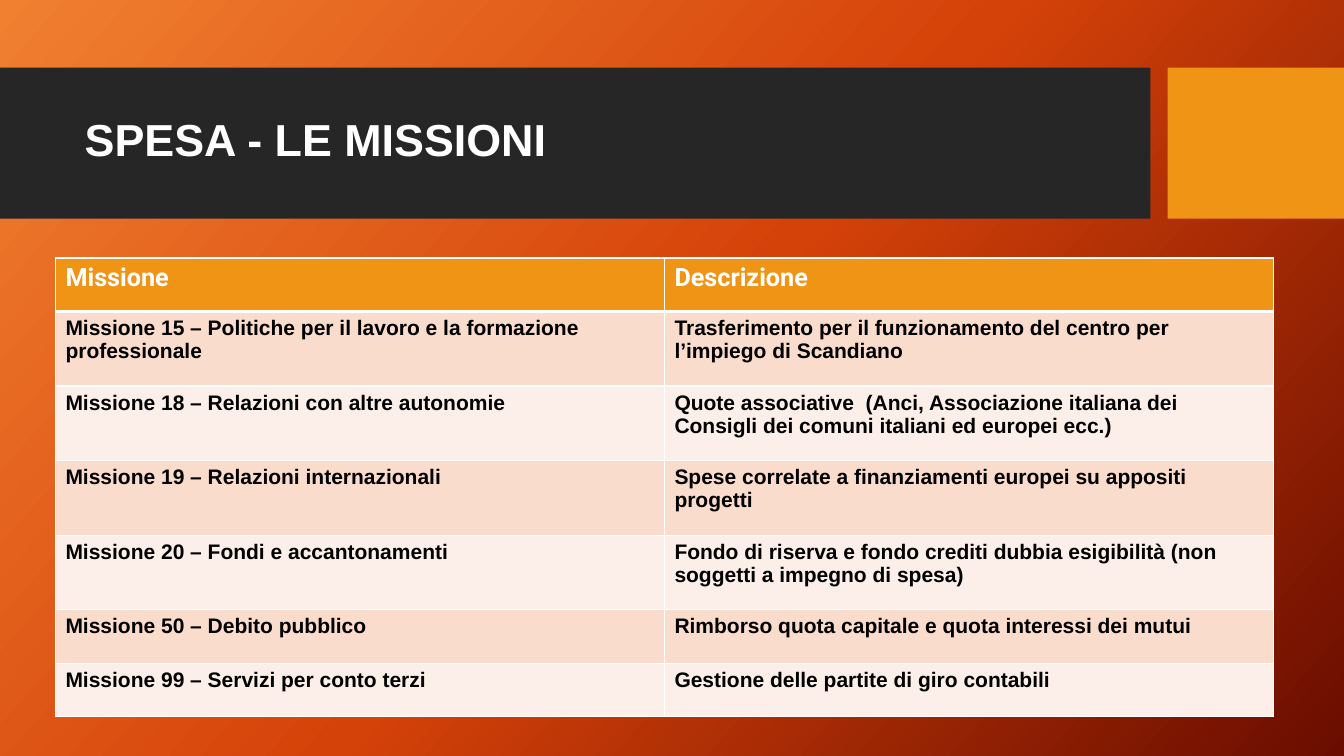
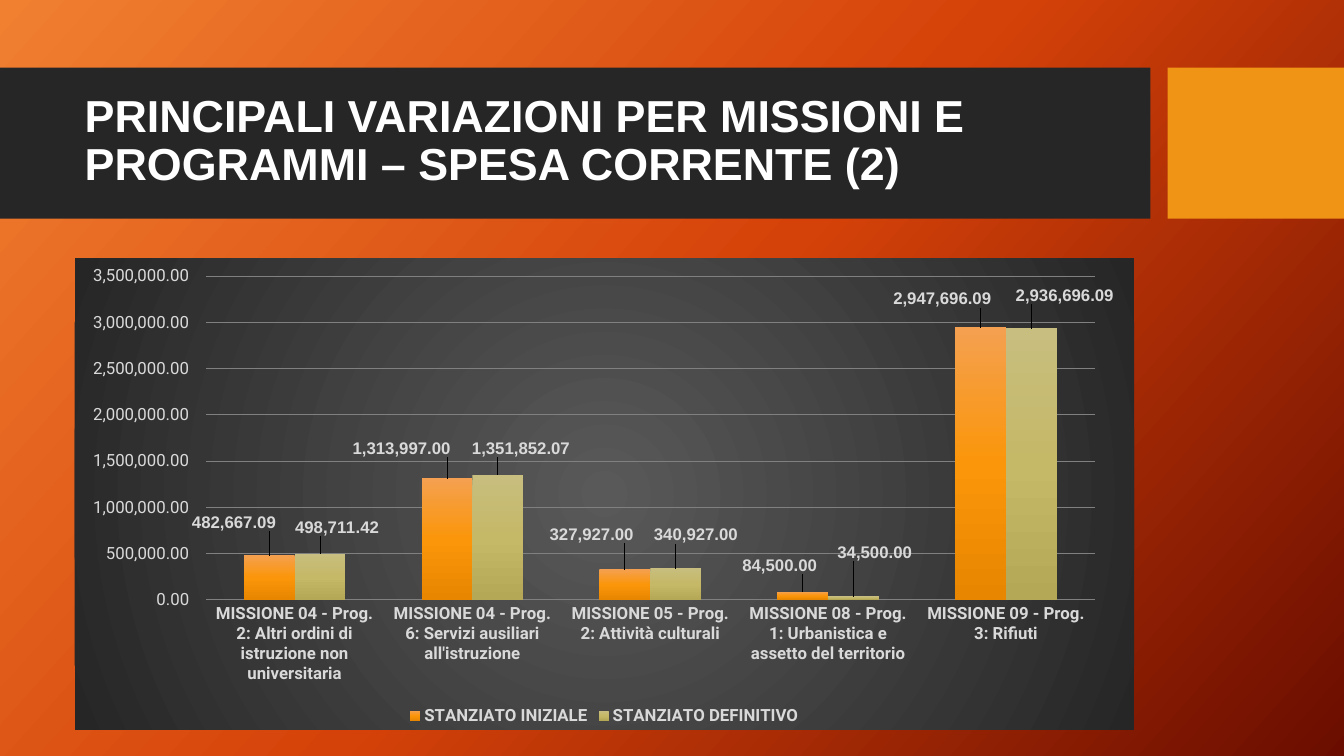
import dataclasses
import itertools

import pptx
import pptx.chart.data
import pptx.dml.color
import pptx.enum.chart
import pptx.enum.shapes
import pptx.enum.text
import pptx.oxml
import pptx.oxml.ns
import pptx.util

Inches = pptx.util.Inches


@dataclasses.dataclass(frozen=True)
class Theme:
    band: str = "262626"
    accent: str = "F09415"
    white: str = "FFFFFF"
    black: str = "000000"
    pale: str = "D9D9D9"
    grid: str = "808080"
    row_fills: tuple = ("F9DCCC", "FCEEE8")
    page_stops: tuple = ((0, "F18031"), (50, "D54209"), (100, "6A0D00"))
    chart_stops: tuple = ((0, "595959"), (100, "262626"))
    series_stops: tuple = (
        ((0, "F4A050"), (50, "FB960A"), (100, "E88600")),
        ((0, "C8BE7F"), (50, "C5B867"), (100, "B4A756")),
    )
    heading_font: str = "Arial"
    body_font: str = "Roboto"
    title_size: int = 32
    header_size: int = 18
    cell_size: int = 15
    chart_size: int = 12


THEME = Theme()
NUMBER_FORMAT = r"#,##0.00\ _€"
CHART_WIDTH, CHART_HEIGHT = 10.51, 4.68

MISSIONS = [
    ("Missione", "Descrizione"),
    ("Missione 15 – Politiche per il lavoro e la formazione professionale",
     "Trasferimento per il funzionamento del centro per l’impiego di Scandiano"),
    ("Missione 18 – Relazioni con altre autonomie",
     "Quote associative  (Anci, Associazione italiana dei Consigli dei comuni italiani ed europei ecc.)"),
    ("Missione 19 – Relazioni internazionali",
     "Spese correlate a finanziamenti europei su appositi progetti"),
    ("Missione 20 – Fondi e accantonamenti",
     "Fondo di riserva e fondo crediti dubbia esigibilità (non soggetti a impegno di spesa)"),
    ("Missione 50 – Debito pubblico",
     "Rimborso quota capitale e quota interessi dei mutui"),
    ("Missione 99 – Servizi per conto terzi",
     "Gestione delle partite di giro contabili"),
]
ROW_HEIGHTS = [0.53, 0.74, 0.74, 0.74, 0.74, 0.53, 0.53]

PROGRAMMES = [
    "MISSIONE 04 - Prog. 2: Altri ordini di istruzione non universitaria",
    "MISSIONE 04 - Prog. 6: Servizi ausiliari all'istruzione",
    "MISSIONE 05 - Prog. 2: Attività culturali",
    "MISSIONE 08 - Prog. 1: Urbanistica e assetto del territorio",
    "MISSIONE 09 - Prog. 3: Rifiuti",
]
BUDGETS = {
    "STANZIATO INIZIALE": [482667.09, 1313997, 327927, 84500, 2947696.09],
    "STANZIATO DEFINITIVO": [498711.42, 1351852.07, 340927, 34500, 2936696.09],
}
LABEL_SHIFTS = [
    [(-0.28, -0.19), (-0.38, -0.17), (-0.26, -0.22), (-0.16, -0.13), (-0.31, -0.15)],
    [(0.24, -0.13), (0.3, -0.13), (0.27, -0.2), (0.28, -0.31), (0.4, -0.2)],
]


def rgb(color):
    return pptx.dml.color.RGBColor.from_string(color)


def make_xml(tag, content, attributes=""):
    names = pptx.oxml.ns.nsdecls("a", "c")
    return pptx.oxml.parse_xml(f"<{tag} {names} {attributes}>{content}</{tag}>")


def make_gradient(stops, angle=None):
    points = "".join(
        f'<a:gs pos="{place * 1000}"><a:srgbClr val="{color}"/></a:gs>'
        for place, color in stops)
    if angle is None:
        course = ('<a:path path="circle"><a:fillToRect l="50000" t="50000" '
                  'r="50000" b="50000"/></a:path>')
    else:
        course = f'<a:lin ang="{angle * 60000}" scaled="0"/>'
    return make_xml("a:gradFill", f"<a:gsLst>{points}</a:gsLst>{course}", 'rotWithShape="1"')


def replace_fill(owner, query, gradient):
    solid = owner.xpath(query)[0]
    solid.getparent().replace(solid, gradient)


def format_font(font, *, size, name, color, bold=False):
    font.size = pptx.util.Pt(size)
    font.name = name
    font.bold = bold
    font.color.rgb = rgb(color)


def write_text(frame, text, *, line_spacing=None, **style):
    para = frame.paragraphs[0]
    para.alignment = pptx.enum.text.PP_ALIGN.LEFT
    para.line_spacing = line_spacing
    span = para.add_run()
    span.text = text
    format_font(span.font, **style)


def add_band(page, layout, identifier, left, width, color):
    band = page.shapes.add_shape(
        pptx.enum.shapes.MSO_SHAPE.RECTANGLE,
        Inches(left), Inches(0.67), Inches(width), Inches(1.5))
    band.shadow.inherit = False
    band.fill.solid()
    band.fill.fore_color.rgb = rgb(color)
    band.line.fill.background()
    band.element.xpath(".//p:cNvPr")[0].set("id", str(identifier))
    layout.shapes.element.insert(2, band.element)


def style_layout(page, layout):
    layout.background.fill.solid()
    replace_fill(layout.element, "./p:cSld/p:bg/p:bgPr/a:solidFill",
                 make_gradient(THEME.page_stops, 42))
    add_band(page, layout, 101, 0, 11.41, THEME.band)
    add_band(page, layout, 102, 11.58, 1.75, THEME.accent)


def set_title(page, text):
    title = page.shapes.title
    title.left, title.top = Inches(0.74), Inches(0.82)
    title.width, title.height = Inches(10.51), Inches(1.18)
    frame = title.text_frame
    frame.word_wrap = True
    frame.auto_size = pptx.enum.text.MSO_AUTO_SIZE.NONE
    frame.vertical_anchor = pptx.enum.text.MSO_ANCHOR.MIDDLE
    write_text(frame, text, line_spacing=0.9, size=THEME.title_size,
               name=THEME.heading_font, color=THEME.white, bold=True)


def set_borders(cell, bottom):
    properties = cell._tc.get_or_add_tcPr()
    for side, width in zip("LRTB", (1, 1, 1, bottom)):
        fill = f'<a:solidFill><a:srgbClr val="{THEME.white}"/></a:solidFill>'
        properties.append(make_xml(f"a:ln{side}", fill, f'w="{width * 12700}"'))


def add_mission_table(page):
    table = page.shapes.add_table(
        len(MISSIONS), 2, Inches(0.55), Inches(2.56),
        Inches(12.08), Inches(sum(ROW_HEIGHTS))).table
    for column in table.columns:
        column.width = Inches(6.04)
    for index, (texts, height) in enumerate(zip(MISSIONS, ROW_HEIGHTS)):
        table.rows[index].height = Inches(height)
        header = index == 0
        if header:
            fill = THEME.accent
            style = dict(size=THEME.header_size, name=THEME.body_font, color=THEME.white)
        else:
            fill = THEME.row_fills[(index - 1) % 2]
            style = dict(size=THEME.cell_size, name=THEME.heading_font, color=THEME.black)
        for cell, text in zip(table.rows[index].cells, texts):
            set_borders(cell, 3 if header else 1)
            cell.fill.solid()
            cell.fill.fore_color.rgb = rgb(fill)
            write_text(cell.text_frame, text, bold=True, **style)


def make_chart_layout(left, top, size=None):
    parts = [("x", left / CHART_WIDTH), ("y", top / CHART_HEIGHT)]
    modes = ""
    if size:
        parts += [("w", size[0] / CHART_WIDTH), ("h", size[1] / CHART_HEIGHT)]
        modes = '<c:layoutTarget val="inner"/><c:xMode val="edge"/><c:yMode val="edge"/>'
    values = "".join(f'<c:{name} val="{value:.4f}"/>' for name, value in parts)
    return make_xml("c:layout", f"<c:manualLayout>{modes}{values}</c:manualLayout>")


def style_axes(chart, style):
    for axis in (chart.category_axis, chart.value_axis):
        axis.major_tick_mark = pptx.enum.chart.XL_TICK_MARK.NONE
        axis.minor_tick_mark = pptx.enum.chart.XL_TICK_MARK.NONE
        axis.format.line.fill.background()
        format_font(axis.tick_labels.font, bold=axis is not chart.value_axis, **style)
    format_font(chart.category_axis.tick_labels.font, bold=True, **style)
    values = chart.value_axis
    format_font(values.tick_labels.font, **style)
    values.minimum_scale, values.maximum_scale = 0, 3500000
    values.major_unit = 500000
    values.tick_labels.number_format = NUMBER_FORMAT
    values.tick_labels.number_format_is_linked = False
    values.major_gridlines.format.line.color.rgb = rgb(THEME.grid)
    values.major_gridlines.format.line.width = pptx.util.Pt(0.75)


def style_series(chart, style):
    above = pptx.enum.chart.XL_LABEL_POSITION.OUTSIDE_END
    for series in chart.plots[0].series:
        series.invert_if_negative = False
        series.format.fill.solid()
        labels = series.data_labels
        labels.show_value = True
        labels.number_format = NUMBER_FORMAT
        labels.number_format_is_linked = False
        labels.position = above
        format_font(labels.font, bold=True, **style)
        for index in range(len(PROGRAMMES)):
            label = series.points[index].data_label
            format_font(label.font, bold=True, **style)
            label.position = above
    for index, stops in enumerate(THEME.series_stops, 1):
        replace_fill(chart.element, f".//c:ser[{index}]/c:spPr/a:solidFill",
                     make_gradient(stops, 90))
    shifts = itertools.chain.from_iterable(LABEL_SHIFTS)
    for label, shift in zip(chart.element.xpath(".//c:dLbl/c:idx"), shifts):
        label.addnext(make_chart_layout(*shift))


def add_budget_chart(page):
    data = pptx.chart.data.CategoryChartData(number_format=NUMBER_FORMAT)
    data.categories = PROGRAMMES
    for name, values in BUDGETS.items():
        data.add_series(name, values)
    chart = page.shapes.add_chart(
        pptx.enum.chart.XL_CHART_TYPE.COLUMN_CLUSTERED,
        Inches(0.74), Inches(2.56), Inches(CHART_WIDTH), Inches(CHART_HEIGHT), data).chart
    style = dict(size=THEME.chart_size, color=THEME.pale, name=THEME.body_font)
    format_font(chart.font, **style)
    chart.has_title = False
    chart.has_legend = True
    chart.legend.position = pptx.enum.chart.XL_LEGEND_POSITION.BOTTOM
    chart.legend.include_in_layout = False
    format_font(chart.legend.font, bold=True, **style)
    plot = chart.plots[0]
    plot.vary_by_categories = False
    plot.gap_width = 150
    plot.overlap = 0
    style_axes(chart, style)
    style_series(chart, {**style, "name": THEME.heading_font})
    area = chart.element.xpath("./c:chart/c:plotArea")[0]
    for layout in area.xpath("./c:layout"):
        area.remove(layout)
    area.insert(0, make_chart_layout(1.3, 0.18, (8.82, 3.21)))
    frame = make_xml("c:spPr", "<a:ln><a:noFill/></a:ln>")
    frame.insert(0, make_gradient(THEME.chart_stops))
    chart.element.xpath("./c:chart")[0].addnext(frame)


def main():
    deck = pptx.Presentation()
    deck.slide_width, deck.slide_height = Inches(13.33), Inches(7.5)
    layout = deck.slide_layouts[5]

    missions = deck.slides.add_slide(layout)
    style_layout(missions, layout)
    set_title(missions, "SPESA - LE MISSIONI")
    add_mission_table(missions)

    variations = deck.slides.add_slide(layout)
    set_title(variations, "PRINCIPALI VARIAZIONI PER MISSIONI E PROGRAMMI – SPESA CORRENTE (2)")
    add_budget_chart(variations)

    deck.save("out.pptx")


if __name__ == "__main__":
    main()
